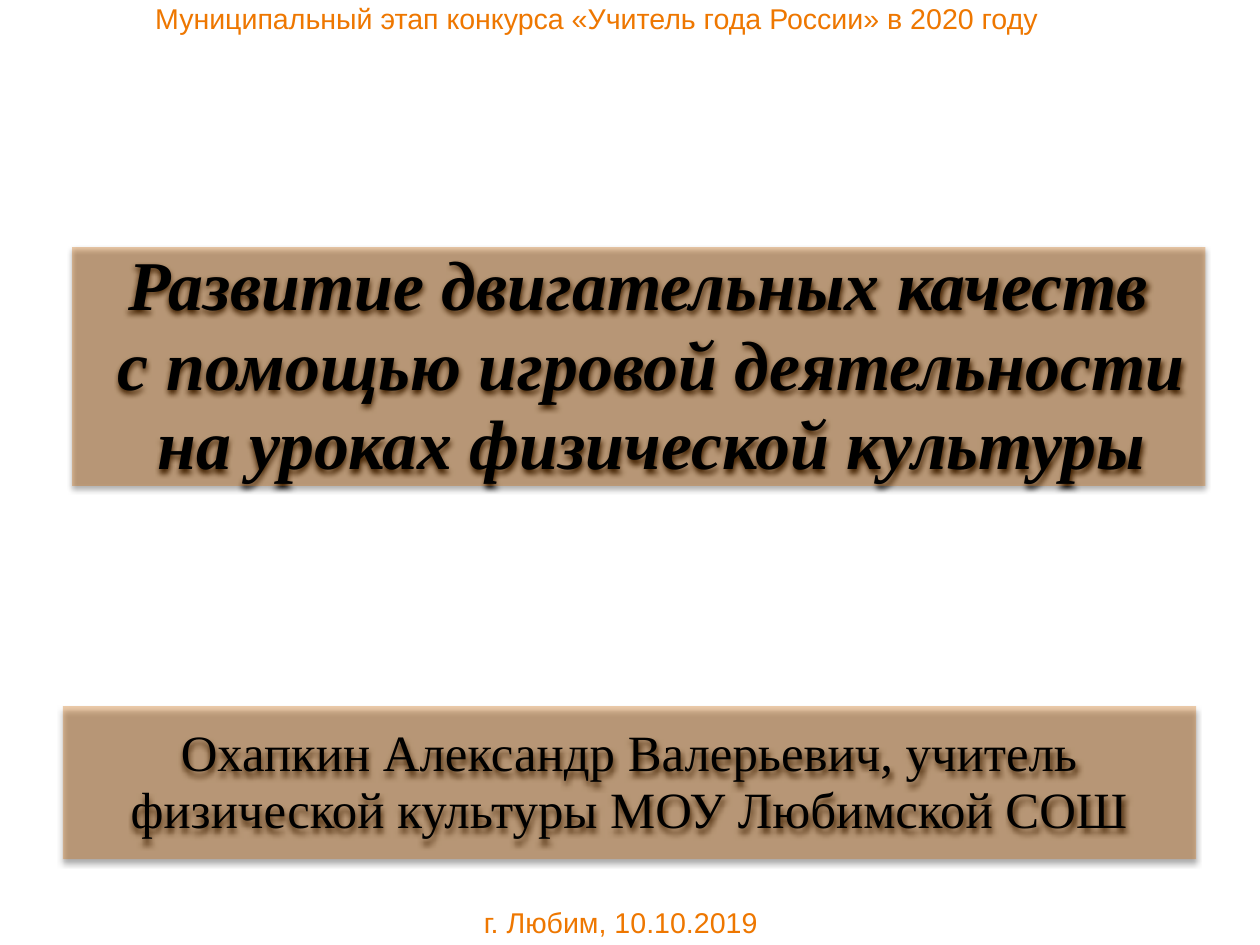
from dataclasses import dataclass
from typing import Any

from lxml.etree import SubElement
from pptx import Presentation
from pptx.dml.color import RGBColor
from pptx.enum.shapes import MSO_SHAPE
from pptx.enum.text import MSO_ANCHOR, MSO_AUTO_SIZE, PP_ALIGN
from pptx.oxml.ns import qn
from pptx.util import Pt


@dataclass(frozen=True)
class Theme:
    serif: str = "Times New Roman"
    sans: str = "Arial"
    ink: str = "000000"
    accent: str = "EE7700"
    panel: str = "CC6600"
    alpha: int = 32000
    title: int = 44
    author: int = 32
    note: int = 18


@dataclass(frozen=True)
class Block:
    text: str
    box: tuple[float, float, float, float]
    font: str
    size: int
    color: str
    spacing: float
    align: PP_ALIGN = PP_ALIGN.CENTER
    hang: float = 16.5
    bold: bool = False


THEME = Theme()

TITLE = Block(
    "Развитие двигательных качеств\vс помощью игровой деятельности на уроках физической культуры",
    (45.4, 155.6, 714, 150.5), THEME.serif, THEME.title, THEME.ink, 0.95, bold=True)
AUTHOR = Block(
    "Охапкин Александр Валерьевич, учитель физической культуры МОУ Любимской СОШ",
    (39.6, 444.8, 714, 96.4), THEME.serif, THEME.author, THEME.ink, 0.93, hang=0)
NOTES = [
    Block("Муниципальный этап конкурса «Учитель года России» в 2020 году",
          (90.7, 0, 571, 27.4), THEME.sans, THEME.note, THEME.accent, 0.87, PP_ALIGN.LEFT),
    Block("г. Любим, 10.10.2019",
          (254.9, 569.5, 272.2, 25.2), THEME.sans, THEME.note, THEME.accent, 0.87),
]


def write(shape: Any, block: Block) -> None:
    """Place a shape and set its text."""
    shape.left, shape.top, shape.width, shape.height = map(Pt, block.box)
    frame = shape.text_frame
    frame.word_wrap = True
    frame.auto_size = MSO_AUTO_SIZE.NONE
    frame.text = block.text
    para = frame.paragraphs[0]
    para.alignment = block.align
    para.line_spacing = block.spacing
    props = para._p.get_or_add_pPr()
    props.set("marL", str(Pt(block.hang)))
    props.set("indent", str(-Pt(block.hang)))
    font = para.font
    font.name, font.size = block.font, Pt(block.size)
    font.bold = font.italic = block.bold
    font.color.rgb = RGBColor.from_string(block.color)


def panel(shape: Any, block: Block) -> None:
    """Fill a panel with clear brown and a soft shadow."""
    write(shape, block)
    frame = shape.text_frame
    frame.vertical_anchor = MSO_ANCHOR.MIDDLE
    frame.margin_left = frame.margin_right = frame.margin_top = frame.margin_bottom = 0
    shape.fill.solid()
    shape.fill.fore_color.rgb = RGBColor.from_string(THEME.panel)
    shape.line.fill.background()
    shape.shadow.inherit = False

    props = shape._element.spPr
    tint = props.find(qn("a:solidFill")).find(qn("a:srgbClr"))
    SubElement(tint, qn("a:alpha"), val=str(THEME.alpha))
    shade = SubElement(props.find(qn("a:effectLst")), qn("a:outerShdw"),
                       blurRad=str(Pt(3.5)), dist=str(Pt(2.2)), dir="5400000",
                       algn="ctr", rotWithShape="0")
    black = SubElement(shade, qn("a:srgbClr"), val=THEME.ink)
    SubElement(black, qn("a:alpha"), val=str(THEME.alpha))


def main() -> None:
    deck = Presentation()
    deck.slide_width, deck.slide_height = Pt(793.75), Pt(595.25)
    slide = deck.slides.add_slide(deck.slide_layouts[5])

    # Title and author panels
    panel(slide.shapes.title, TITLE)
    panel(slide.shapes.add_shape(MSO_SHAPE.RECTANGLE, *map(Pt, AUTHOR.box)), AUTHOR)

    # Contest line on top, place and date below
    for note in NOTES:
        write(slide.shapes.add_textbox(*map(Pt, note.box)), note)

    deck.save("out.pptx")


if __name__ == "__main__":
    main()
